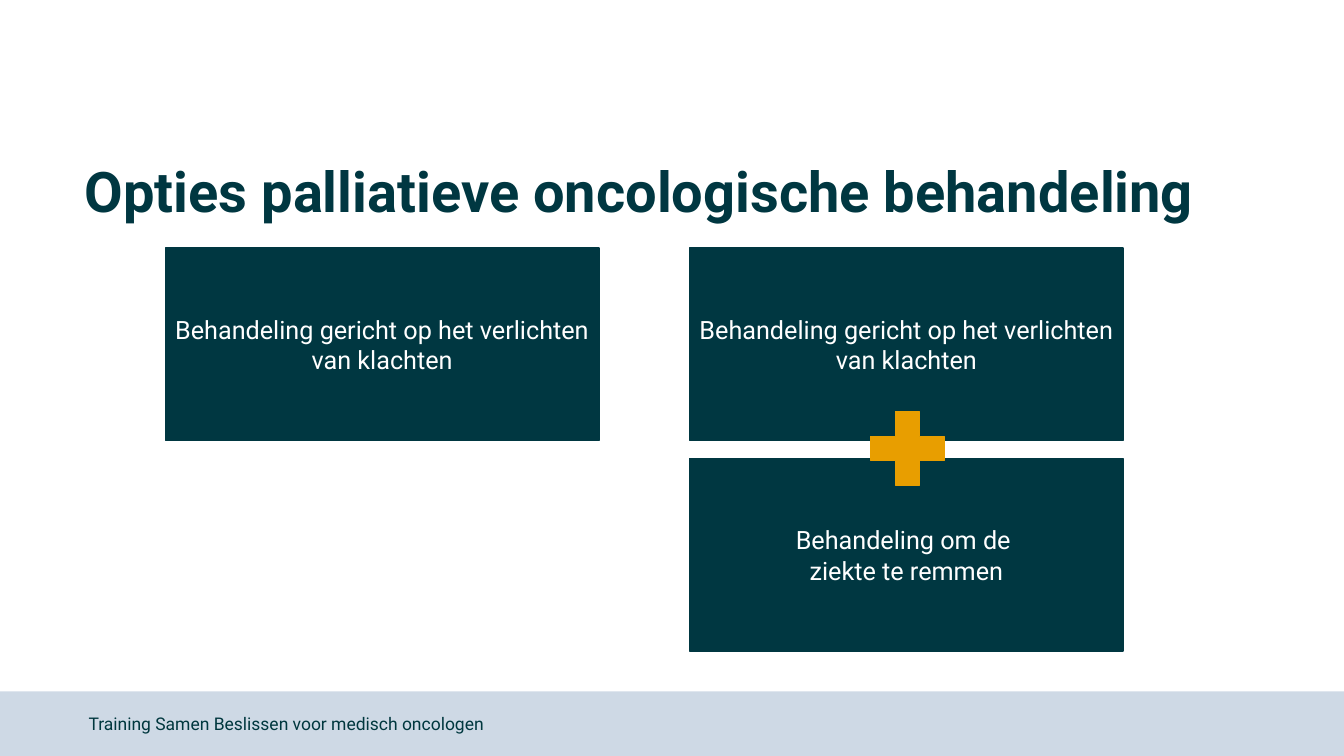
from pptx import Presentation
from pptx.dml.color import RGBColor
from pptx.enum import shapes, text
from pptx.util import Inches, Pt

FONT = "Roboto"
COLORS = {
    "background": "FFFFFF",
    "band": "CED9E5",
    "box": "003741",
    "plus": "E89E00",
    "footer": "00373E",
    "box text": "FFFFFF",
}
BOX_WIDTH, BOX_HEIGHT, BOX_MARGIN = 4.3, 1.91, 0.05
LEFT_COLUMN, RIGHT_COLUMN = 1.64, 6.84
TOP_ROW, BOTTOM_ROW = 2.46, 4.55


def color(name):
    return RGBColor.from_string(COLORS[name])


def write(frame, lines, size, color_name, align=text.PP_ALIGN.LEFT, bold=False, spacing=1.0):
    frame.word_wrap = True
    frame.auto_size = text.MSO_AUTO_SIZE.NONE
    frame.vertical_anchor = text.MSO_ANCHOR.MIDDLE
    for index, line in enumerate(lines):
        paragraph = frame.add_paragraph() if index else frame.paragraphs[0]
        paragraph.alignment = align
        paragraph.line_spacing = spacing
        run = paragraph.add_run()
        run.text = line
        run.font.name = FONT
        run.font.size = Pt(size)
        run.font.bold = bold
        run.font.color.rgb = color(color_name)


def add_filled_shape(slide, kind, left, top, width, height, fill, outlined=True):
    shape = slide.shapes.add_shape(
        kind, Inches(left), Inches(top), Inches(width), Inches(height))
    shape.shadow.inherit = False
    shape.fill.solid()
    shape.fill.fore_color.rgb = color(fill)
    if outlined:
        shape.line.color.rgb = color(fill)
        shape.line.width = Pt(1)
    else:
        shape.line.fill.background()
    return shape


def add_option(slide, left, top, lines):
    box = add_filled_shape(slide, shapes.MSO_SHAPE.RECTANGLE, left, top,
                           BOX_WIDTH, BOX_HEIGHT, "box")
    frame = box.text_frame
    frame.margin_left = frame.margin_right = Inches(BOX_MARGIN)
    write(frame, lines, 18, "box text", text.PP_ALIGN.CENTER)


def add_title(slide, wording):
    title = slide.shapes.title
    title.left, title.top = Inches(0.74), Inches(1.2)
    title.width, title.height = Inches(11.77), Inches(1.45)
    write(title.text_frame, [wording], 40, "box", bold=True, spacing=0.9)


def add_footer(slide, wording):
    footer = slide.shapes.add_textbox(Inches(0.78), Inches(6.98), Inches(5.91), Inches(0.4))
    write(footer.text_frame, [wording], 12.5, "footer")


def main():
    presentation = Presentation()
    presentation.slide_width, presentation.slide_height = Inches(13.33), Inches(7.5)
    slide = presentation.slides.add_slide(presentation.slide_layouts[5])
    slide.background.fill.solid()
    slide.background.fill.fore_color.rgb = color("background")

    # Footer band and title
    add_filled_shape(slide, shapes.MSO_SHAPE.RECTANGLE, 0, 6.86, 13.33, 0.64,
                     "band", outlined=False)
    add_title(slide, "Opties palliatieve oncologische behandeling")

    # Treatment options
    for column in (LEFT_COLUMN, RIGHT_COLUMN):
        add_option(slide, column, TOP_ROW,
                   ["Behandeling gericht op het verlichten van klachten"])
    add_option(slide, RIGHT_COLUMN, BOTTOM_ROW, ["Behandeling om de ", "ziekte te remmen"])

    # Plus sign joining the two right-hand options
    add_filled_shape(slide, shapes.MSO_SHAPE.MATH_PLUS, 8.5, 3.95, 1, 1, "plus")

    add_footer(slide, "Training Samen Beslissen voor medisch oncologen")
    presentation.save("out.pptx")


if __name__ == "__main__":
    main()
